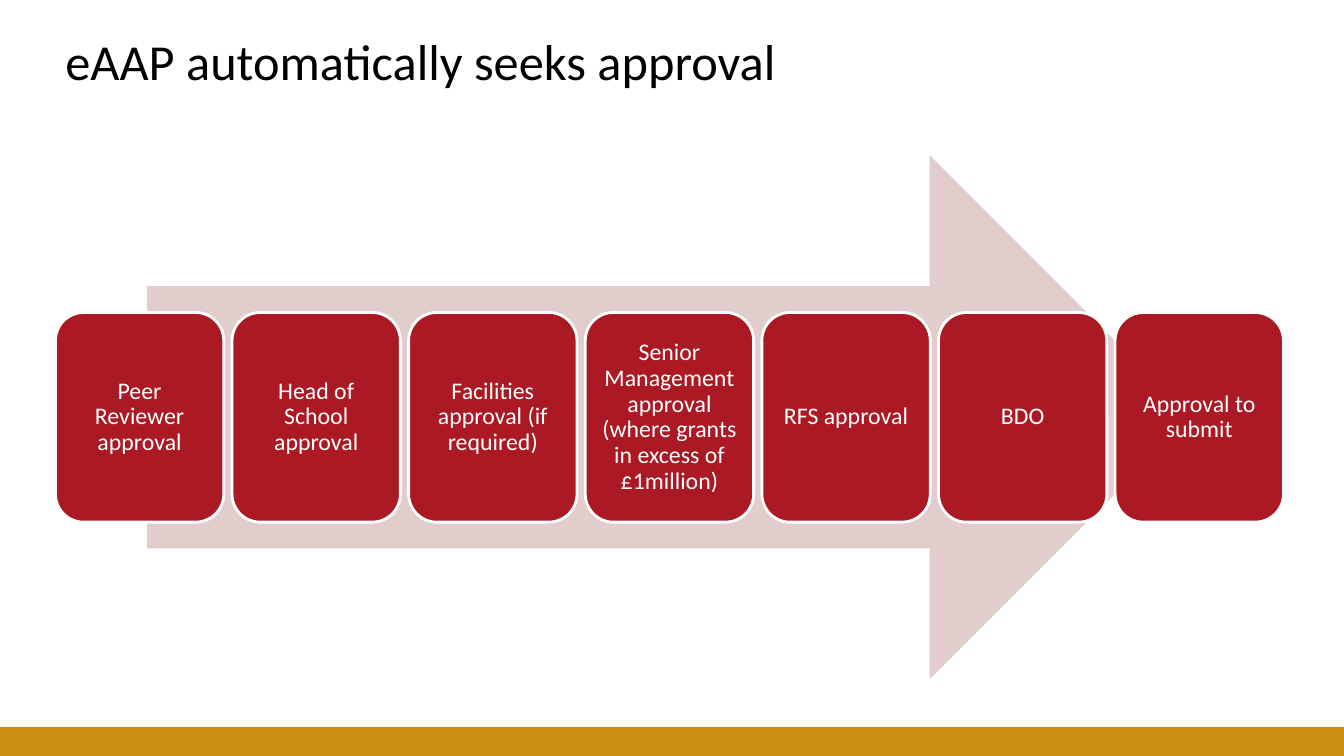
"""Build the slide showing the chain of eAAP approvals."""
from pptx import Presentation
from pptx.dml.color import RGBColor
from pptx.enum.shapes import MSO_SHAPE
from pptx.enum.text import MSO_ANCHOR, PP_ALIGN
from pptx.util import Inches, Pt

RECTANGLE = MSO_SHAPE.RECTANGLE
RIGHT_ARROW = MSO_SHAPE.RIGHT_ARROW
ROUNDED_RECTANGLE = MSO_SHAPE.ROUNDED_RECTANGLE
MIDDLE = MSO_ANCHOR.MIDDLE
LEFT, CENTER = PP_ALIGN.LEFT, PP_ALIGN.CENTER

FONT = "Calibri"
COLORS = {
    "black": "000000",
    "white": "FFFFFF",
    "gold": "CB8E12",
    "pink": "E2CDCD",
    "red": "AB1A24",
}
STEPS = [
    "Peer Reviewer approval",
    "Head of School approval",
    "Facilities approval (if required)",
    "Senior Management approval (where grants in excess of £1million)",
    "RFS approval",
    "BDO",
    "Approval to submit",
]
FIRST_LEFT, LAST_LEFT = 0.55, 11.06
STEP_PITCH = (LAST_LEFT - FIRST_LEFT) / (len(STEPS) - 1)


def add_filled_shape(kind, left, top, width, height, color):
    shape = slide.shapes.add_shape(
        kind, Inches(left), Inches(top), Inches(width), Inches(height)
    )
    shape.shadow.inherit = False
    shape.fill.solid()
    shape.fill.fore_color.rgb = RGBColor.from_string(COLORS[color])
    shape.line.fill.background()
    return shape


def write_text(shape, text, size, color, alignment):
    frame = shape.text_frame
    frame.word_wrap = True
    frame.vertical_anchor = MIDDLE
    paragraph = frame.paragraphs[0]
    paragraph.alignment = alignment
    paragraph.line_spacing = 0.9
    run = paragraph.add_run()
    run.text = text
    run.font.name = FONT
    run.font.size = Pt(size)
    run.font.color.rgb = RGBColor.from_string(COLORS[color])


presentation = Presentation()
presentation.slide_width = Inches(13.33)
presentation.slide_height = Inches(7.5)
slide = presentation.slides.add_slide(presentation.slide_layouts[6])

add_filled_shape(RECTANGLE, 0, 7.21, 13.33, 0.29, "gold")

title = slide.shapes.add_textbox(
    Inches(0.55), Inches(0.28), Inches(12.19), Inches(0.71)
)
write_text(title, "eAAP automatically seeks approval", 36, "black", LEFT)

add_filled_shape(RIGHT_ARROW, 1.46, 1.54, 10.36, 5.2, "pink")

for index, step in enumerate(STEPS):
    left = FIRST_LEFT + index * STEP_PITCH
    box = add_filled_shape(ROUNDED_RECTANGLE, left, 3.1, 1.67, 2.08, "red")
    box.line.color.rgb = RGBColor.from_string(COLORS["white"])
    box.line.width = Pt(2)
    frame = box.text_frame
    frame.margin_left = frame.margin_right = Inches(0.07)
    frame.margin_top = frame.margin_bottom = Inches(0.07)
    write_text(box, step, 17, "white", CENTER)

presentation.save("out.pptx")
